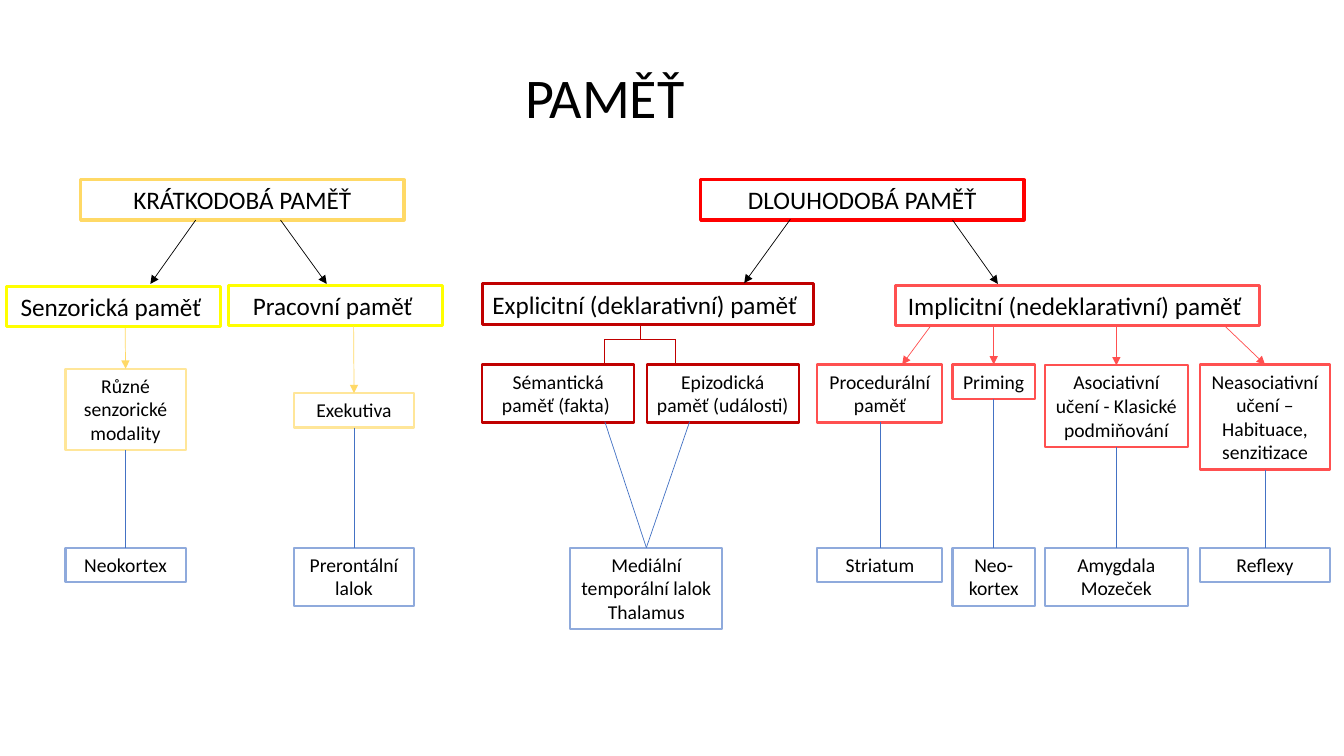
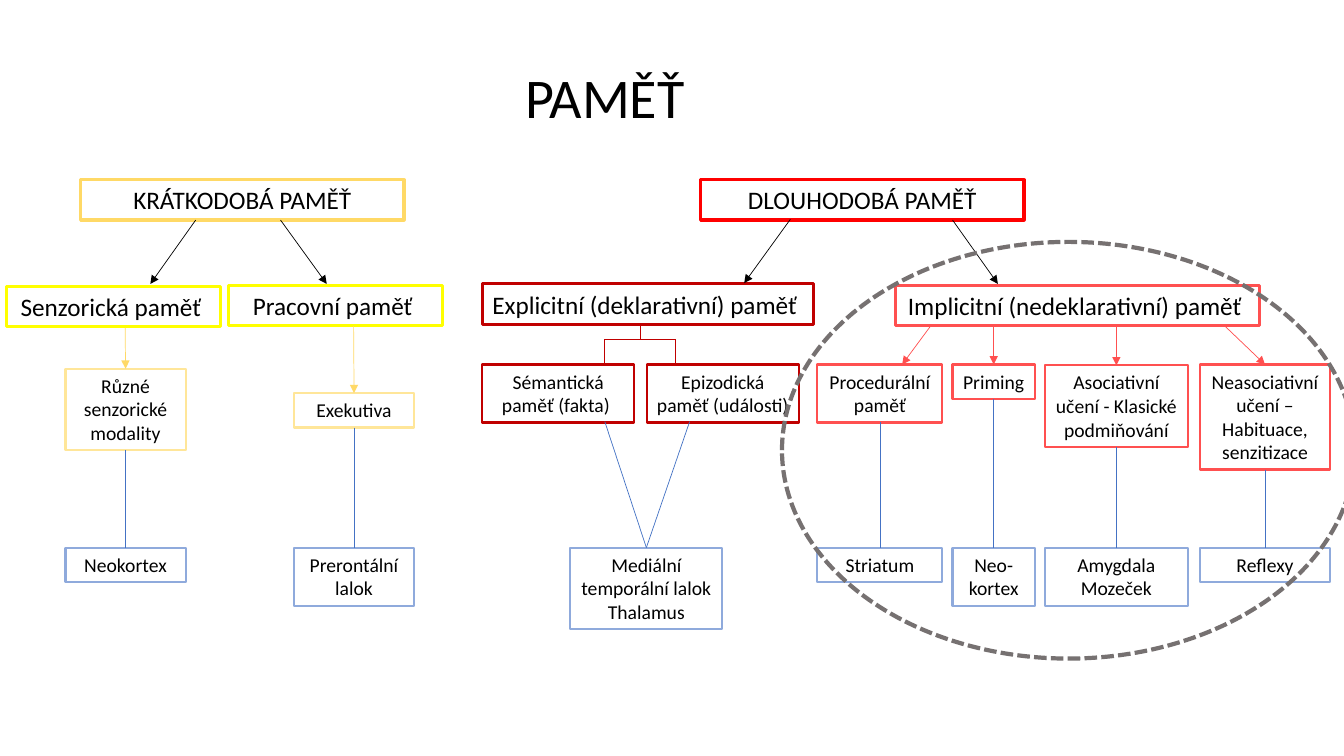
"""Build two slides with a tree of memory types, the second with its implicit branch ringed."""
from typing import NamedTuple

from lxml.etree import SubElement
from pptx import Presentation
from pptx.dml.color import RGBColor
from pptx.enum.dml import MSO_LINE
from pptx.enum.shapes import MSO_CONNECTOR, MSO_SHAPE
from pptx.enum.text import MSO_ANCHOR, MSO_AUTO_SIZE, PP_ALIGN
from pptx.oxml.ns import qn
from pptx.util import Inches, Pt

WIDE, HIGH = Inches(13.33), Inches(7.5)
COLS, ROWS = 160, 90
FONT = "Calibri"
BLACK, RED, DARK, CORAL = "000000", "FF0000", "C00000", "FF5050"
GOLD, YELLOW, CREAM = "FFD966", "FFFF00", "FFE699"
BLUE, SKY, GREY = "4472C4", "8FAADC", "767171"
HEAD, KIND, TYPE, SITE = 21.4, 34, 43.4, 65.2
BEND = 40.4


class Col(NamedTuple):
    """Left edge and width in grid columns."""
    left: float
    width: float


class Box(NamedTuple):
    """Framed label; small ones grow with their line count."""
    text: str
    col: Col
    top: float
    hue: str
    lines: int = 0

    @property
    def tall(self) -> float:
        """Height in grid rows."""
        return 1.3 + 2.8 * self.lines if self.lines else 4.8


Spot = tuple[float, float]


class Link(NamedTuple):
    """Line from a point or box bottom to a point or box top."""
    start: Spot | str
    end: Spot | str
    hue: str
    arrow: bool = False


SENSE, WORK = Col(7.8, 14.3), Col(35, 14.3)
FACT, EVENT, LOBE = Col(57.4, 18.1), Col(77, 18.1), Col(67.9, 18.1)
SKILL, PRIME = Col(97.3, 14.9), Col(113.4, 9.8)
ASSOC, REFLEX = Col(124.4, 17), Col(142.9, 15.4)

HEADS = {
    "short": Box("KRÁTKODOBÁ PAMĚŤ", Col(9.6, 38.5), HEAD, GOLD),
    "long": Box("DLOUHODOBÁ PAMĚŤ", Col(83.4, 38.5), HEAD, RED),
    "sensory": Box("Senzorická paměť ", Col(0.8, 25.5), KIND + 0.1, YELLOW),
    "working": Box("Pracovní paměť ", Col(27.2, 25.5), KIND, YELLOW),
    "explicit": Box("Explicitní (deklarativní) paměť ", Col(57.4, 39.4), KIND - 0.2, DARK),
    "implicit": Box("Implicitní (nedeklarativní) paměť ", Col(106.6, 43.4), KIND, CORAL),
}
TYPES = {
    "modes": Box("Různé senzorické modality", SENSE, TYPE + 0.5, CREAM, 3),
    "control": Box("Exekutiva", WORK, TYPE + 3.4, CREAM, 1),
    "facts": Box("Sémantická paměť (fakta) ", FACT, TYPE, DARK, 2),
    "events": Box("Epizodická paměť (události) ", EVENT, TYPE, DARK, 2),
    "skills": Box("Procedurální paměť", SKILL, TYPE, CORAL, 2),
    "priming": Box("Priming", PRIME, TYPE, CORAL, 1),
    "assoc": Box("Asociativní učení - Klasické podmiňování", ASSOC, TYPE + 0.1, CORAL, 3),
    "habit": Box("Neasociativní učení – Habituace, senzitizace", REFLEX, TYPE, CORAL, 4),
}
SITES = {
    "cortex": Box("Neokortex", SENSE, SITE, SKY, 1),
    "frontal": Box("Prerontální lalok", WORK, SITE, SKY, 2),
    "medial": Box("Mediální temporální lalok\nThalamus", LOBE, SITE, SKY, 3),
    "striatum": Box("Striatum", SKILL, SITE, SKY, 1),
    "neo": Box("Neo-kortex", PRIME, SITE, SKY, 2),
    "amygdala": Box("Amygdala\nMozeček", ASSOC, SITE, SKY, 2),
    "reflex": Box("Reflexy", REFLEX, SITE, SKY, 1),
}
BOXES = HEADS | TYPES | SITES

LINKS = [
    Link((23.3, 26.2), (17.9, 33.8), BLACK, True),
    Link((33.4, 26.2), (38.9, 33.8), BLACK, True),
    Link((113.4, 26.2), (118.8, 33.8), BLACK, True),
    Link((94.1, 26.1), (88.6, 33.7), BLACK, True),
    Link((110.8, 38.8), (107.4, TYPE), CORAL, True),
    Link((118.3, 38.8), "priming", CORAL, True),
    Link((132.9, 38.8), "assoc", CORAL, True),
    Link((145.8, 38.8), "habit", CORAL, True),
    Link((14.9, 39), "modes", GOLD, True),
    Link((42.1, 38.8), "control", GOLD, True),
    Link((72, 50.2), "medial", BLUE),
    Link((82.1, 50.2), "medial", BLUE),
] + [
    Link(kind, site, BLUE)
    for kind, upper in TYPES.items()
    for site, lower in SITES.items()
    if upper.col == lower.col
]
FORK = [
    Link((76.2, 38.6), (76.2, BEND), DARK),
    Link((80.4, BEND), (72, BEND), DARK),
    Link((72, BEND), (72, TYPE), DARK),
    Link((80.4, BEND), (80.4, TYPE), DARK),
]


def tint(code: str) -> RGBColor:
    """Turn a hex string into a colour."""
    return RGBColor.from_string(code)


def across(cols: float) -> int:
    """Turn grid columns into a length."""
    return round(WIDE * cols / COLS)


def down(rows: float) -> int:
    """Turn grid rows into a length."""
    return round(HIGH * rows / ROWS)


def style(frame, size: float) -> None:
    """Centre the text and set its font."""
    for para in frame.paragraphs:
        para.alignment = PP_ALIGN.CENTER
        for run in para.runs:
            run.font.name = FONT
            run.font.size = Pt(size)
            run.font.color.rgb = tint(BLACK)


def outline(slide, form, col: Col, top: float, tall: float, hue: str, weight: float):
    """Draw an unfilled shape on the grid."""
    shape = slide.shapes.add_shape(
        form, across(col.left), down(top), across(col.width), down(tall))
    shape.shadow.inherit = False
    shape.fill.background()
    shape.line.color.rgb = tint(hue)
    shape.line.width = Pt(weight)
    return shape


def label(slide, box: Box):
    """Draw one framed label."""
    shape = outline(slide, MSO_SHAPE.RECTANGLE, box.col, box.top, box.tall,
                    box.hue, 1.5 if box.lines else 2.25)
    frame = shape.text_frame
    frame.word_wrap = True
    frame.auto_size = MSO_AUTO_SIZE.SHAPE_TO_FIT_TEXT
    frame.vertical_anchor = MSO_ANCHOR.TOP
    frame.text = box.text
    style(frame, 14 if box.lines else 18)
    return shape


def place(end: Spot | str, low: bool) -> Spot:
    """Find the grid point of a link's end."""
    if isinstance(end, str):
        box = BOXES[end]
        return box.col.left + box.col.width / 2, box.top + low * box.tall
    return end


def join(shapes, link: Link, drawn: dict) -> None:
    """Draw one link and glue it to the boxes it names."""
    (left, top), (right, base) = place(link.start, True), place(link.end, False)
    line = shapes.add_connector(
        MSO_CONNECTOR.STRAIGHT, across(left), down(top), across(right), down(base))
    if isinstance(link.start, str):
        line.begin_connect(drawn[link.start], 2)
    if isinstance(link.end, str):
        line.end_connect(drawn[link.end], 0)
    line.line.color.rgb = tint(link.hue)
    line.line.width = Pt(0.5)
    props = line._element.spPr
    if link.arrow:
        SubElement(props.find(qn("a:ln")), qn("a:tailEnd"), type="triangle")
    SubElement(props, qn("a:effectLst"))


def chart(deck):
    """Add a slide with the title and the whole tree."""
    slide = deck.slides.add_slide(deck.slide_layouts[5])
    title = slide.shapes.title
    title.left, title.top = across(3), down(5.4)
    title.width, title.height = across(138), down(12)
    title.text_frame.text = "PAMĚŤ"
    title.text_frame.vertical_anchor = MSO_ANCHOR.MIDDLE
    style(title.text_frame, 40)
    drawn = {name: label(slide, box) for name, box in BOXES.items()}
    for link in LINKS:
        join(slide.shapes, link, drawn)
    group = slide.shapes.add_group_shape()
    for link in FORK:
        join(group.shapes, link, drawn)
    return slide


def main() -> None:
    """Build and save the deck."""
    deck = Presentation()
    deck.slide_width, deck.slide_height = WIDE, HIGH
    chart(deck)
    ring = outline(chart(deck), MSO_SHAPE.OVAL, Col(93.1, 68.2), 28.8, 49.6, GREY, 3)
    ring.line.dash_style = MSO_LINE.SQUARE_DOT
    deck.save("out.pptx")


if __name__ == "__main__":
    main()
